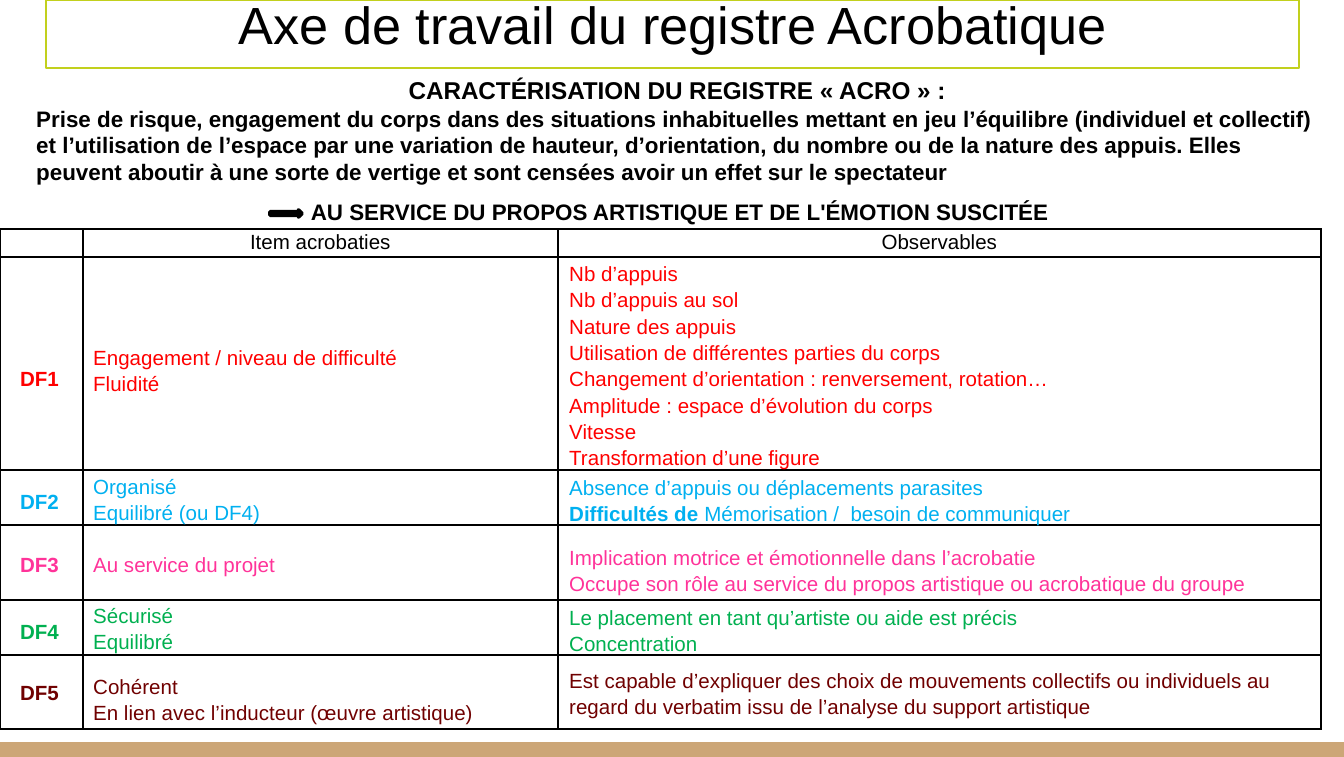
import pptx
import pptx.util
import pptx.dml.color
import pptx.enum.shapes
import pptx.enum.text
from lxml import etree

PX = 914400 / 134.4
A = "{http://schemas.openxmlformats.org/drawingml/2006/main}"
Pt = pptx.util.Pt
ALIGN = pptx.enum.text.PP_ALIGN
ANCHOR = pptx.enum.text.MSO_ANCHOR
SHAPE = pptx.enum.shapes.MSO_SHAPE
rgb = pptx.dml.color.RGBColor.from_string


def px(*lengths):
    """Turn lengths in px into EMU."""
    return [pptx.util.Emu(round(n * PX)) for n in lengths]


def write(tf, lines, size, color, bold=False, align=ALIGN.LEFT, spacing=1.07):
    tf.text = "\n".join(lines)
    tf.word_wrap = True
    for p in tf.paragraphs:
        p.alignment = align
        p.line_spacing = spacing
        for r in p.runs:
            r.font.name = "Arial"
            r.font.size = Pt(size)
            r.font.bold = bold
            r.font.color.rgb = rgb(color)


prs = pptx.Presentation()
prs.slide_width, prs.slide_height = px(1344, 757)
s = prs.slides.add_slide(prs.slide_layouts[5])

# Footer band
band = s.shapes.add_shape(SHAPE.RECTANGLE, *px(0, 742, 1344, 15))
band.shadow.inherit = False
band.fill.solid()
band.fill.fore_color.rgb = rgb("CCA677")
band.line.fill.background()

# Title
title = s.shapes.title
title.left, title.top, title.width, title.height = px(46, 0, 1253, 68)
title.line.color.rgb = rgb("C2D01D")
title.line.width = Pt(0.75)
tf = title.text_frame
write(tf, ["Axe de travail du registre Acrobatique"], 28, "000000", align=ALIGN.CENTER, spacing=1.0)
tf.auto_size = pptx.enum.text.MSO_AUTO_SIZE.NONE
tf.vertical_anchor = ANCHOR.BOTTOM
tf.margin_left = tf.margin_right = tf.margin_top = tf.margin_bottom = px(13)[0]

# Definition of the register
intro = s.shapes.add_textbox(*px(23, 69, 1314, 165))
tf = intro.text_frame
write(tf, [
    "CARACTÉRISATION DU REGISTRE « ACRO » : ",
    "Prise de risque, engagement du corps dans des situations inhabituelles mettant en jeu "
    "l’équilibre (individuel et collectif) et l’utilisation de l’espace par une variation de "
    "hauteur, d’orientation, du nombre ou de la nature des appuis. Elles peuvent aboutir à une "
    "sorte de vertige et sont censées avoir un effet sur le spectateur",
    "AU SERVICE DU PROPOS ARTISTIQUE ET DE L'ÉMOTION SUSCITÉE",
], 12, "000000", bold=True, spacing=1.0)
heading, _, purpose = tf.paragraphs
heading.alignment = purpose.alignment = ALIGN.CENTER
heading.runs[0].font.size = Pt(13)
purpose.space_before = Pt(7)

# Table grid
col_widths = [83, 475, 763]
row_heights = [28, 213, 55, 75, 55, 74]
headers = ["", "Item acrobaties", "Observables"]
table = s.shapes.add_table(len(row_heights), len(col_widths),
                           *px(0, 229, sum(col_widths), sum(row_heights))).table
table.first_row = table.horz_banding = False
for col, width in zip(table.columns, px(*col_widths)):
    col.width = width
for row, height in zip(table.rows, px(*row_heights)):
    row.height = height
for cell in table.iter_cells():
    cell.margin_left = cell.margin_right = px(9)[0]
    cell.margin_top = cell.margin_bottom = 0
    tcPr = cell._tc.get_or_add_tcPr()
    for side in ("lnL", "lnR", "lnT", "lnB"):
        ln = etree.SubElement(tcPr, A + side, w="12700")
        fill = etree.SubElement(ln, A + "solidFill")
        etree.SubElement(fill, A + "srgbClr", val="000000")
    cell.fill.background()
for i, text in enumerate(headers):
    tf = table.cell(0, i).text_frame
    if text:
        write(tf, [text], 11, "000000", align=ALIGN.CENTER)
    else:
        etree.SubElement(tf.paragraphs[0]._p, A + "endParaRPr", sz="1100")

# Per row: label, colour, (top, height) of label, items and observables, then their lines
rows = [
    ("DF1", "FF0000", [(357, 41), (311, 117), (267, 195)],
     ["Engagement / niveau de difficulté", "Fluidité"],
     ["Nb d’appuis", "Nb d’appuis au sol", "Nature des appuis",
      "Utilisation de différentes parties du corps",
      "Changement d’orientation : renversement, rotation…",
      "Amplitude : espace d’évolution du corps", "Vitesse", "Transformation d’une figure"]),
    ("DF2", "00B0F0", [(471, 60), (468, 61), (469, 61)],
     ["Organisé", "Equilibré (ou DF4)"],
     ["Absence d’appuis ou déplacements parasites",
      "Difficultés de Mémorisation /  besoin de communiquer"]),
    ("DF3", "FF3399", [(534, 58), (529, 69), (535, 69)],
     ["Au service du projet"],
     ["Implication motrice et émotionnelle dans l’acrobatie",
      "Occupe son rôle au service du propos artistique ou acrobatique du groupe"]),
    ("DF4", "00B050", [(604, 53), (601, 53), (603, 53)],
     ["Sécurisé", "Equilibré"],
     ["Le placement en tant qu’artiste ou aide est précis", "Concentration"]),
    ("DF5", "700000", [(670, 42), (667, 63), (654, 77)],
     ["Cohérent", "En lien avec l’inducteur (œuvre artistique)"],
     ["Est capable d’expliquer des choix de mouvements collectifs ou individuels au "
      "regard du verbatim issu de l’analyse du support artistique"]),
]
columns = [(0, 79), (80, 476), (556, 766)]
for label, color, spans, items, observables in rows:
    for (left, width), (top, height), lines in zip(columns, spans, ([label], items, observables)):
        tf = s.shapes.add_textbox(*px(left, top, width, height)).text_frame
        is_label = left == 0
        write(tf, lines, 11, color, is_label, ALIGN.CENTER if is_label else ALIGN.LEFT)
        tf.vertical_anchor = ANCHOR.MIDDLE
        if label == "DF2" and lines is observables:
            p = tf.paragraphs[1]
            p.runs[0].text = "Difficultés de "
            p.runs[0].font.bold = True
            r = p.add_run()
            r.text = "Mémorisation /  besoin de communiquer"
            r.font.name = "Arial"
            r.font.size = Pt(11)
            r.font.color.rgb = rgb(color)

# Arrow before the purpose line
arrow = s.shapes.add_shape(SHAPE.RIGHT_ARROW, *px(270, 210, 32, 7))
arrow.shadow.inherit = False
arrow.fill.solid()
arrow.fill.fore_color.rgb = rgb("000000")
arrow.line.color.rgb = rgb("000000")
arrow.line.width = Pt(2)

prs.save("out.pptx")
